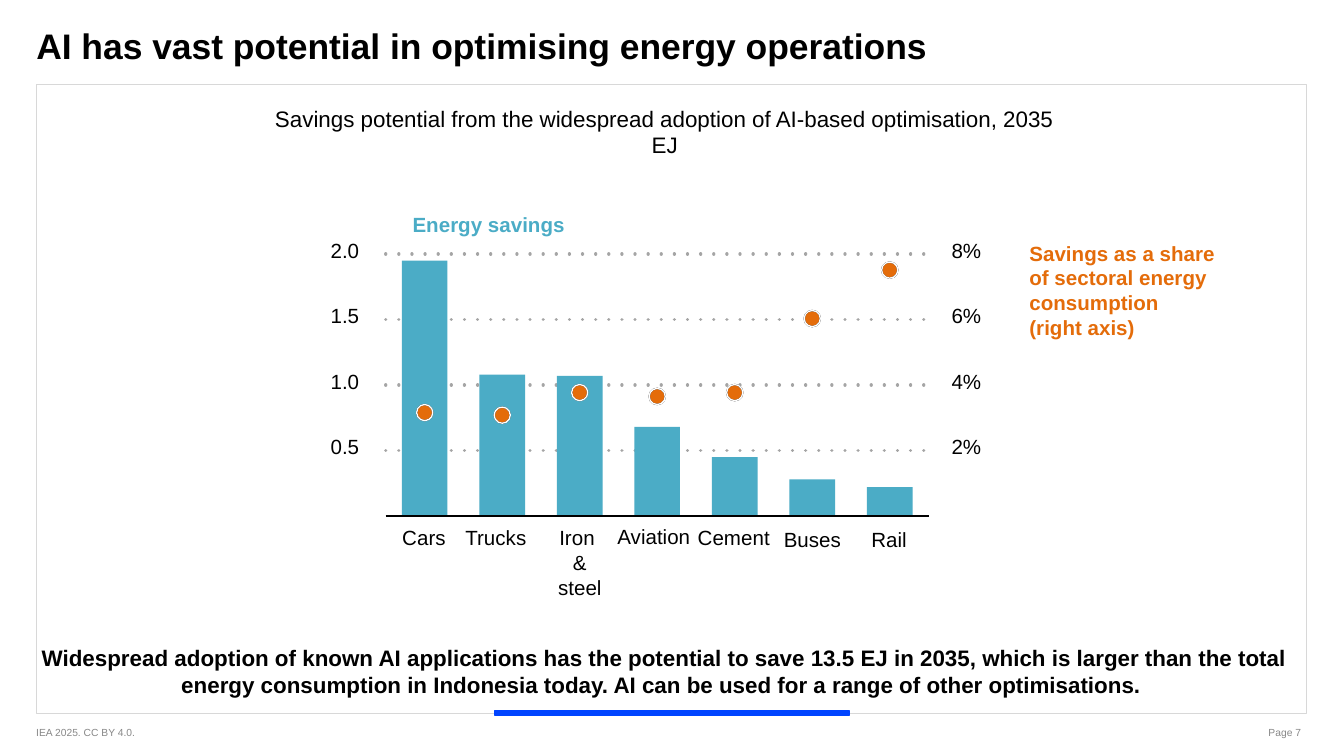
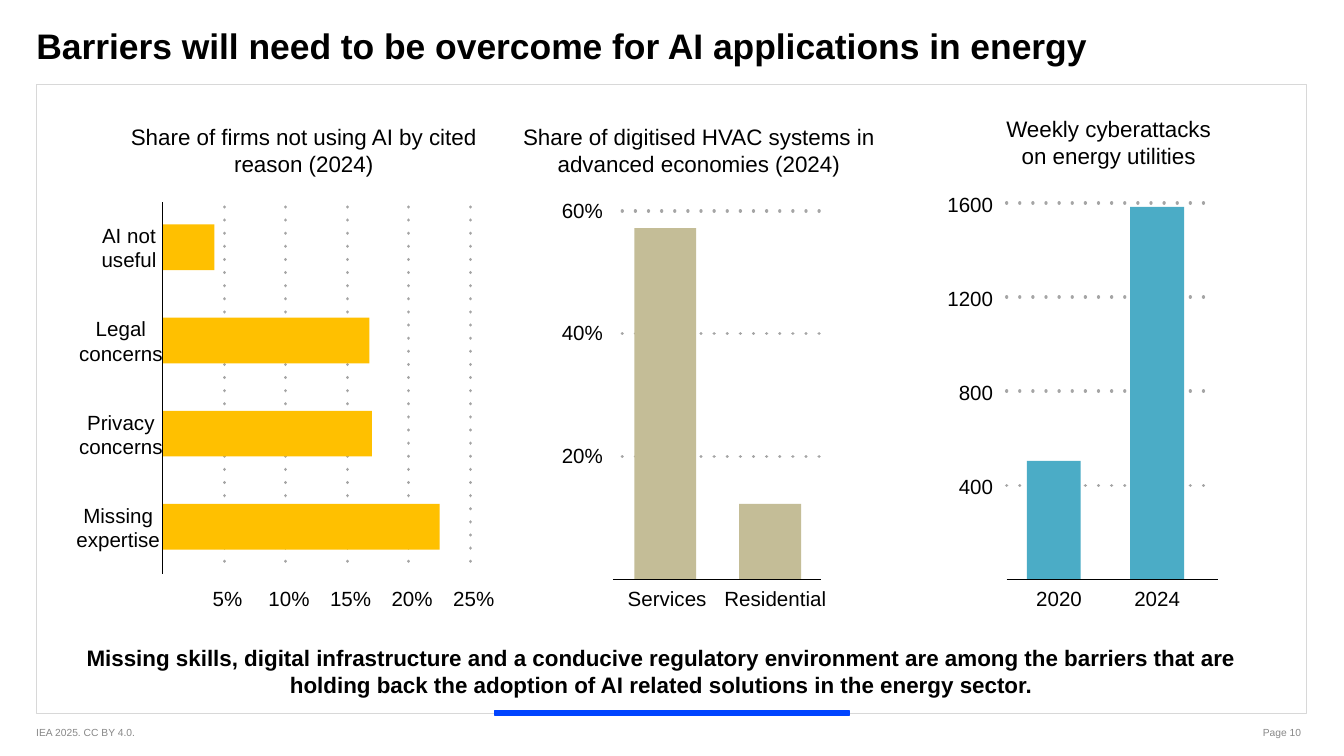
from dataclasses import dataclass
from typing import NamedTuple

from lxml import etree
from pptx import Presentation
from pptx.dml.color import RGBColor
from pptx.enum.shapes import MSO_CONNECTOR, MSO_SHAPE
from pptx.enum.text import MSO_ANCHOR, MSO_AUTO_SIZE, PP_ALIGN
from pptx.oxml.ns import qn
from pptx.util import Inches, Pt

LEFT, CENTER, RIGHT = PP_ALIGN.LEFT, PP_ALIGN.CENTER, PP_ALIGN.RIGHT
TOP, MIDDLE = MSO_ANCHOR.TOP, MSO_ANCHOR.MIDDLE
RECT, OVAL = MSO_SHAPE.RECTANGLE, MSO_SHAPE.OVAL
STRAIGHT = MSO_CONNECTOR.STRAIGHT
NO_AUTOFIT = MSO_AUTO_SIZE.NONE

FONT = "Arial"
COLORS = {
    "text": "000000",
    "footer": "888888",
    "frame": "D8D8D8",
    "accent": "0044FF",
    "grid": "A5A5A5",
    "teal": "4BACC6",
    "orange": "E46C0A",
    "yellow": "FFC000",
    "sand": "C4BD97",
    "white": "FFFFFF",
}
LABEL_H = 0.19
DOT = 0.12


class Label(NamedTuple):
    text: str
    x: float
    y: float
    w: float
    h: float = LABEL_H
    align: PP_ALIGN = LEFT
    size: float = 11
    color: str = "text"
    bold: bool = False
    wrap: bool = False
    anchor: MSO_ANCHOR = TOP
    insets: tuple = (0, 0, 0, 0)


@dataclass
class Plot:
    base: float
    end: float
    ticks: list[float]
    grid: tuple[float, float]
    axis: tuple[float, float]
    first: float
    last: float
    thick: float
    values: list[float]
    color: str
    horizontal: bool = False

    def at(self, value: float) -> float:
        return self.base + (self.end - self.base) * value / self.ticks[-1]

    def bar_start(self, i: int) -> float:
        return self.first + (self.last - self.first) * i / (len(self.values) - 1)

    def point(self, along: float, across: float) -> tuple[float, float]:
        return (along, across) if self.horizontal else (across, along)


def rgb(name: str) -> RGBColor:
    return RGBColor.from_string(COLORS[name])


def format_text(sp, label: Label) -> None:
    tf = sp.text_frame
    tf.text = label.text
    tf.word_wrap = label.wrap
    tf.auto_size = NO_AUTOFIT
    tf.vertical_anchor = label.anchor
    tf.margin_left, tf.margin_top, tf.margin_right, tf.margin_bottom = map(Inches, label.insets)
    for p in tf.paragraphs:
        p.alignment = label.align
        for r in p.runs:
            r.font.name = FONT
            r.font.size = Pt(label.size)
            r.font.bold = label.bold
            r.font.color.rgb = rgb(label.color)


def add_label(s, label: Label) -> None:
    sp = s.shapes.add_textbox(*map(Inches, (label.x, label.y, label.w, label.h)))
    format_text(sp, label)


def add_shape(s, kind, box: tuple, fill: str | None, line: str) -> None:
    sp = s.shapes.add_shape(kind, *map(Inches, box))
    sp.shadow.inherit = False
    if fill:
        sp.fill.solid()
        sp.fill.fore_color.rgb = rgb(fill)
    else:
        sp.fill.background()
    sp.line.color.rgb = rgb(line)
    sp.line.width = Pt(0.75)


def add_line(s, start: tuple, end: tuple, color: str, width: float, dotted: bool = False) -> None:
    cx = s.shapes.add_connector(STRAIGHT, *map(Inches, (*start, *end)))
    cx.line.color.rgb = rgb(color)
    cx.line.width = Pt(width)
    sp_pr = cx._element.spPr
    if dotted:
        ln = sp_pr.find(qn("a:ln"))
        ln.set("cap", "rnd")
        etree.SubElement(ln, qn("a:prstDash")).set("val", "dot")
    etree.SubElement(sp_pr, qn("a:effectLst"))


def add_bars(s, plot: Plot) -> None:
    builder = None
    for i, value in enumerate(plot.values):
        near = plot.bar_start(i)
        far = near + plot.thick
        tip = plot.at(value)
        corners = [(plot.base, near), (tip, near), (tip, far), (plot.base, far)]
        points = [tuple(map(Inches, plot.point(*c))) for c in corners]
        if builder is None:
            builder = s.shapes.build_freeform(*points[0])
        else:
            builder.move_to(*points[0])
        builder.add_line_segments(points[1:], close=True)
    sp = builder.convert_to_shape()
    sp.shadow.inherit = False
    sp.fill.solid()
    sp.fill.fore_color.rgb = rgb(plot.color)
    sp.line.fill.background()


def add_plot(s, plot: Plot) -> None:
    for tick in plot.ticks:
        start, end = (plot.point(plot.at(tick), g) for g in plot.grid)
        add_line(s, start, end, "grid", 1.75, dotted=True)
    add_bars(s, plot)
    start, end = (plot.point(plot.base, a) for a in plot.axis)
    add_line(s, start, end, "text", 0.75)


def add_tick_labels(s, plot: Plot, texts: list[str], x: float, w: float, rise: float,
                    align: PP_ALIGN = LEFT) -> None:
    for tick, text in zip(plot.ticks, texts):
        add_label(s, Label(text, x, plot.at(tick) - rise, w, align=align))


def add_heading(s, text: str, x: float, y: float, w: float, h: float = 0.31,
                right: float = 0.1) -> None:
    add_label(s, Label(text, x, y, w, h, CENTER, 12, wrap=True, insets=(0, 0.05, right, 0.05)))


def add_base_slide(prs, title: str, message: str, page: int):
    s = prs.slides.add_slide(prs.slide_layouts[5])
    sp = s.shapes.title
    sp.left, sp.top, sp.width, sp.height = map(Inches, (0.27, 0.18, 8.74, 0.43))
    format_text(sp, Label(title, 0.27, 0.18, 8.74, size=19, bold=True, wrap=True))
    for text, x, align in (("IEA 2025. CC BY 4.0.", 0.27, LEFT), (f"Page {page}", 8.45, RIGHT)):
        add_label(s, Label(text, x, 5.35, 1.33, 0.2, align, 5.5, "footer", wrap=True,
                           anchor=MIDDLE, insets=(0, 0.05, 0.1, 0.05)))
    add_shape(s, RECT, (0.27, 0.63, 9.45, 4.68), None, "frame")
    add_shape(s, RECT, (3.68, 5.29, 2.64, 0.03), "accent", "accent")
    add_label(s, Label(message, 0.27, 4.79, 9.45, 0.48, CENTER, 12, bold=True, wrap=True,
                       anchor=MIDDLE, insets=(0, 0, 0.1, 0.08)))
    return s


def build_savings(prs) -> None:
    s = add_base_slide(
        prs, "AI has vast potential in optimising energy operations",
        "Widespread adoption of known AI applications has the potential to save 13.5 EJ in 2035, "
        "which is larger than the total energy consumption in Indonesia today. "
        "AI can be used for a range of other optimisations. ", 7)
    add_heading(s, "Savings potential from the widespread adoption of AI-based optimisation, 2035\nEJ",
                0.27, 0.73, 9.45)
    energy = Plot(3.84, 1.89, [0.5, 1, 1.5, 2], (2.87, 6.91), (2.87, 6.91), 2.99, 6.45, 0.34,
                  [1.95, 1.08, 1.07, 0.68, 0.45, 0.28, 0.22], "teal")
    add_plot(s, energy)
    shares = [3.16, 3.08, 3.77, 3.65, 3.77, 6.03, 7.51]
    for i, share in enumerate(shares):
        x = energy.bar_start(i) + (energy.thick - DOT) / 2
        box = (x, energy.at(share / 4) - DOT / 2, DOT, DOT)
        add_shape(s, OVAL, box, "orange", "text")
        add_shape(s, OVAL, box, None, "white")
    add_tick_labels(s, energy, ["2%", "4%", "6%", "8%"], 7.08, 0.22, 0.12)
    add_tick_labels(s, energy, ["0.5", "1.0", "1.5", "2.0"], 2.46, 0.21, 0.12)
    sectors = [
        Label("Cars", 2.99, 3.91, 0.33),
        Label("Trucks", 3.46, 3.91, 0.46),
        Label("Iron \n&\nsteel", 4.15, 3.91, 0.33, 0.56),
        Label("Aviation", 4.59, 3.9, 0.55),
        Label("Cement", 5.19, 3.91, 0.54),
        Label("Buses", 5.83, 3.92, 0.43),
        Label("Rail", 6.48, 3.92, 0.27),
    ]
    for sector in sectors:
        add_label(s, sector._replace(align=CENTER))
    add_label(s, Label("Energy savings", 3.07, 1.58, 1.14, color="teal", bold=True))
    add_label(s, Label("Savings as a share of sectoral energy consumption\n(right axis)",
                       7.66, 1.79, 1.54, 0.74, color="orange", bold=True, wrap=True))


def build_barriers(prs) -> None:
    s = add_base_slide(
        prs, "Barriers will need to be overcome for AI applications in energy",
        "Missing skills, digital infrastructure and a conducive regulatory environment are among "
        "the barriers that are \vholding back the adoption of AI related solutions in the energy "
        "sector. ", 10)

    add_heading(s, "Share of firms not using AI by cited reason (2024)", 0.92, 0.87, 2.78)
    firms = Plot(1.21, 3.5, [5, 10, 15, 20, 25], (1.54, 4.27), (4.27, 1.5), 1.67, 3.75, 0.34,
                 [4.2, 16.8, 17, 22.5], "yellow", horizontal=True)
    add_plot(s, firms)
    for tick in firms.ticks:
        add_label(s, Label(f"{tick}%", firms.at(tick) - 0.13, 4.36, 0.31, align=CENTER))
    reasons = [("AI not", "useful", 0.96), ("Legal", "concerns", 0.9),
               ("Privacy", "concerns", 0.9), ("Missing", "expertise", 0.88)]
    for i, (upper, lower, middle) in enumerate(reasons):
        y = firms.bar_start(i) - 0.01
        add_label(s, Label(upper, middle - 0.32, y, 0.64, align=CENTER))
        add_label(s, Label(lower, middle - 0.32, y + 0.18, 0.64, align=CENTER))

    add_heading(s, "Share of digitised HVAC systems in advanced economies (2024)", 3.86, 0.87, 2.78)
    hvac = Plot(4.31, 1.57, [20, 40, 60], (4.63, 6.11), (4.56, 6.11), 4.72, 5.5, 0.46,
                [57.2, 12.3], "sand")
    add_plot(s, hvac)
    add_tick_labels(s, hvac, ["20%", "40%", "60%"], 4.18, 0.31, 0.1)
    add_label(s, Label("Services", 4.67, 4.36, 0.59))
    add_label(s, Label("Residential", 5.39, 4.36, 0.77))

    add_heading(s, "Weekly cyberattacks\non energy utilities", 7.48, 0.81, 1.54, 0.89, 0)
    attacks = Plot(4.31, 1.51, [400, 800, 1200, 1600], (7.49, 9.02), (7.49, 9.06), 7.64, 8.41, 0.4,
                   [503, 1583], "teal")
    add_plot(s, attacks)
    add_tick_labels(s, attacks, ["400", "800", "1200", "1600"], 7.05, 0.34, 0.08, RIGHT)
    add_label(s, Label("2020", 7.71, 4.36, 0.34))
    add_label(s, Label("2024", 8.44, 4.36, 0.34))


def main() -> None:
    prs = Presentation()
    prs.slide_width = Inches(10)
    prs.slide_height = prs.slide_width * 9 // 16
    build_savings(prs)
    build_barriers(prs)
    prs.save("out.pptx")


if __name__ == "__main__":
    main()
